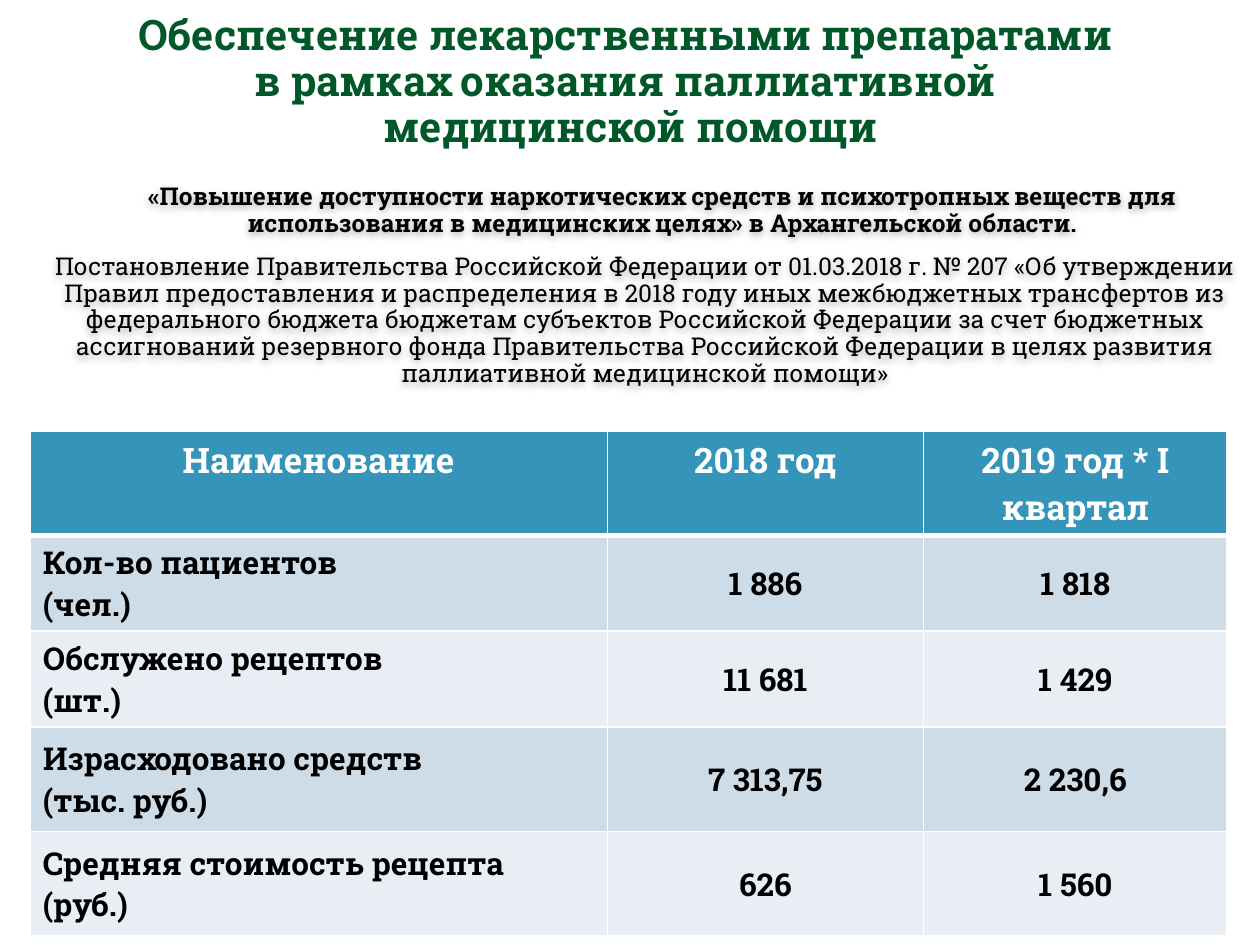
from lxml.etree import SubElement
from pptx import Presentation
from pptx.dml.color import RGBColor
from pptx.enum.text import MSO_ANCHOR as Anchor, PP_ALIGN as Align
from pptx.oxml import parse_xml
from pptx.oxml.ns import nsdecls, qn
from pptx.util import Inches, Pt

FONT = "Roboto Slab"
COLORS = {"title": "005828", "text": "000000", "white": "FFFFFF",
          "header": "3494BA", "odd": "CEDCE7", "even": "E8EEF3"}

TITLE = ["Обеспечение лекарственными препаратами \v"
         "в рамках оказания паллиативной \vмедицинской помощи"]
PROGRAM = ("«Повышение доступности наркотических средств и психотропных веществ для "
           "использования в медицинских целях» в Архангельской области.")
DECREE = ("Постановление Правительства Российской Федерации от 01.03.2018 г. № 207 "
          "«Об утверждении Правил предоставления и распределения в 2018 году иных "
          "межбюджетных трансфертов из федерального бюджета бюджетам субъектов "
          "Российской Федерации за счет бюджетных ассигнований резервного фонда "
          "Правительства Российской Федерации в целях развития паллиативной "
          "медицинской помощи»")
HEADER = ["Наименование", "2018 год", "2019 год * I квартал"]
ROWS = [
    (["Кол-во пациентов", "(чел.)"], "1 886", "1 818"),
    (["Обслужено рецептов", "(шт.)"], "11 681", "1 429"),
    (["Израсходовано средств", "(тыс. руб.)"], "7 313,75", "2 230,6"),
    (["Средняя стоимость рецепта (руб.)"], "626", "1 560"),
]
COLUMN_WIDTHS = [4.58, 2.51, 2.41]
ROW_HEIGHTS = [0.83, 0.76, 0.76, 0.83, 0.83]


def write(frame, paragraphs, size, color="text", bold=True, align=Align.CENTER,
          spacing=None, before=0, append=False):
    """Fill a text frame, or append to it, with equally formatted paragraphs."""
    for index, text in enumerate(paragraphs):
        fresh = index == 0 and not append
        paragraph = frame.paragraphs[0] if fresh else frame.add_paragraph()
        paragraph.text = text
        paragraph.alignment = align
        paragraph.line_spacing = spacing
        paragraph.space_before = Pt(before)
        for run in paragraph.runs:
            run.font.name, run.font.size, run.font.bold = FONT, Pt(size), bold
            run.font.color.rgb = RGBColor.from_string(COLORS[color])


def add_text_area(slide, left, top, width, height, anchor):
    area = slide.shapes.add_textbox(*map(Inches, (left, top, width, height)))
    area.text_frame.word_wrap = True
    area.text_frame.vertical_anchor = anchor
    return area


def add_soft_shadow(area):
    area._element.spPr.append(parse_xml(
        f'<a:effectLst {nsdecls("a")}><a:outerShdw blurRad="50800" dist="25400" '
        'dir="5400000"><a:srgbClr val="000000"><a:alpha val="30000"/></a:srgbClr>'
        '</a:outerShdw></a:effectLst>'))


def style_cell(cell, fill, bottom=1):
    cell.fill.solid()
    properties = cell._tc.get_or_add_tcPr()
    for position, (side, width) in enumerate(
            {"lnL": 1, "lnR": 1, "lnT": 1, "lnB": bottom}.items()):
        border = properties.makeelement(qn(f"a:{side}"), {"w": str(Pt(width))})
        line_fill = SubElement(border, qn("a:solidFill"))
        SubElement(line_fill, qn("a:srgbClr"), val=COLORS["white"])
        properties.insert(position, border)
    cell.fill.fore_color.rgb = RGBColor.from_string(COLORS[fill])


def add_results(slide):
    frame = slide.shapes.add_table(
        len(ROW_HEIGHTS), len(COLUMN_WIDTHS), Inches(0.24), Inches(3.42),
        Inches(sum(COLUMN_WIDTHS)), Inches(sum(ROW_HEIGHTS)))
    table = frame.table
    for column, width in zip(table.columns, COLUMN_WIDTHS):
        column.width = Inches(width)
    for row, height in zip(table.rows, ROW_HEIGHTS):
        row.height = Inches(height)
    for cell, heading in zip(table.rows[0].cells, HEADER):
        style_cell(cell, "header", bottom=3)
        write(cell.text_frame, [heading], 20, color="white")
    for number, (label, *values) in enumerate(ROWS, start=1):
        contents = [label] + [[value] for value in values]
        for column, paragraphs in enumerate(contents):
            cell = table.cell(number, column)
            style_cell(cell, "odd" if number % 2 else "even")
            cell.vertical_anchor = Anchor.MIDDLE
            write(cell.text_frame, paragraphs, 18,
                  align=Align.CENTER if column else Align.LEFT)


def main():
    deck = Presentation()
    deck.slide_width, deck.slide_height = Inches(10), Inches(7.5)
    slide = deck.slides.add_slide(deck.slide_layouts[6])

    title = add_text_area(slide, 0.28, 0.08, 9.45, 1.15, Anchor.MIDDLE)
    write(title.text_frame, TITLE, 24, color="title", spacing=0.91)

    basis = add_text_area(slide, 0.24, 1.41, 9.76, 4.3, Anchor.TOP)
    add_soft_shadow(basis)
    write(basis.text_frame, [PROGRAM], 14, spacing=0.91)
    indent = basis.text_frame.paragraphs[0]._p.get_or_add_pPr()
    indent.set("marL", str(Inches(0.28)))
    write(basis.text_frame, [DECREE], 14, bold=False, spacing=0.91, before=9.5,
          append=True)

    add_results(slide)
    deck.save("out.pptx")


if __name__ == "__main__":
    main()
